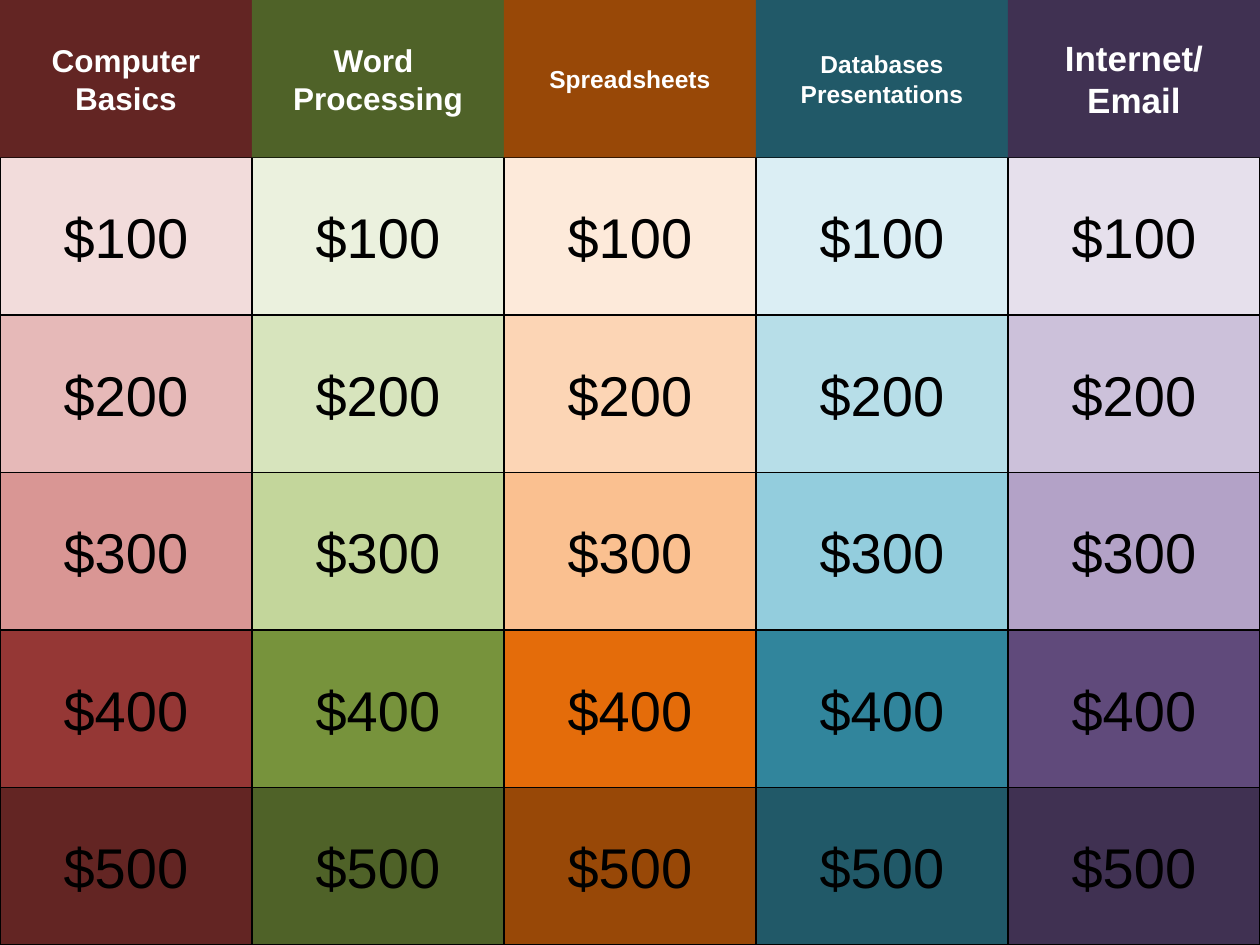
from pptx import Presentation
from pptx.dml.color import RGBColor
from pptx.enum.shapes import MSO_SHAPE
from pptx.enum.text import MSO_ANCHOR, PP_ALIGN
from pptx.util import Pt

# Content: heading lines, heading size, colour family
TOPICS = [
    (["Computer", "Basics"], 18, "red"),
    (["Word ", "Processing"], 18, "green"),
    (["Spreadsheets"], 14, "orange"),
    (["Databases", "Presentations"], 14, "teal"),
    (["Internet/", "Email"], 20, "purple"),
]
PRIZES = ["$100", "$200", "$300", "$400", "$500"]

# Shades run from the first prize to the last; headings use the last
SHADES = {
    "red": ["F2DCDB", "E6B9B8", "D99694", "953735", "632523"],
    "green": ["EBF1DE", "D7E4BD", "C3D69B", "77933C", "4F6228"],
    "orange": ["FDEADA", "FCD5B5", "FAC090", "E46C0A", "984807"],
    "teal": ["DBEEF4", "B7DEE8", "93CDDD", "31859C", "215968"],
    "purple": ["E6E0EC", "CCC1DA", "B3A2C7", "604A7B", "403152"],
}
INK = {"text": "000000", "edge": "000000", "head": "FFFFFF"}

WIDE, HIGH = 720, 540
CELL_W = WIDE / len(TOPICS)
CELL_H = HIGH / (len(PRIZES) + 1)


def add_cell(slide, kind, col, row, fill, lines, size, ink, bold=False):
    cell = slide.shapes.add_shape(
        kind, Pt(col * CELL_W), Pt(row * CELL_H), Pt(CELL_W), Pt(CELL_H))
    cell.shadow.inherit = False
    cell.fill.solid()
    cell.fill.fore_color.rgb = RGBColor.from_string(fill)
    frame = cell.text_frame
    frame.word_wrap = False
    frame.vertical_anchor = MSO_ANCHOR.MIDDLE
    frame.text = "\n".join(lines)
    for para in frame.paragraphs:
        para.alignment = PP_ALIGN.CENTER
        para.font.name = "Arial"
        para.font.size = Pt(size)
        para.font.bold = bold
        para.font.color.rgb = RGBColor.from_string(ink)
    return cell


def main():
    deck = Presentation()
    deck.slide_width, deck.slide_height = Pt(WIDE), Pt(HIGH)
    slide = deck.slides.add_slide(deck.slide_layouts[6])

    # Prize buttons
    for col, (_, _, hue) in enumerate(TOPICS):
        for row, (prize, fill) in enumerate(zip(PRIZES, SHADES[hue]), 1):
            cell = add_cell(slide, MSO_SHAPE.ACTION_BUTTON_CUSTOM, col, row,
                            fill, [prize], 32, INK["text"])
            cell.line.color.rgb = RGBColor.from_string(INK["edge"])
            cell.line.width = Pt(0.75)

    # Topic headings
    for col, (lines, size, hue) in enumerate(TOPICS):
        cell = add_cell(slide, MSO_SHAPE.RECTANGLE, col, 0, SHADES[hue][-1],
                        lines, size, INK["head"], bold=True)
        cell.line.fill.background()

    deck.save("out.pptx")


if __name__ == "__main__":
    main()
